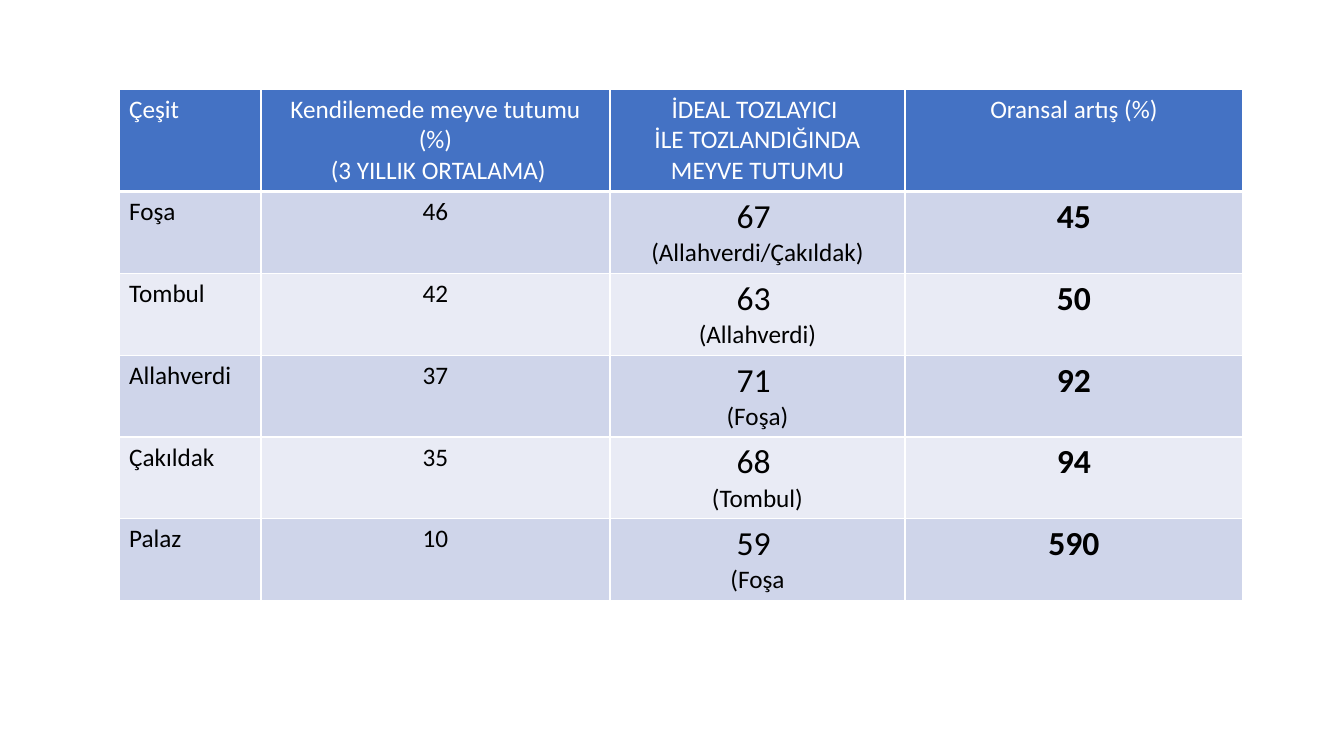
from dataclasses import dataclass

import lxml.etree
import pptx
import pptx.dml.color
import pptx.enum.text
import pptx.oxml.ns
import pptx.util

EMU_PER_PX = 914400 / 100.8


@dataclass(frozen=True)
class Theme:
    font: str = "Calibri"
    header_fill: str = "4472C4"
    band_fills: tuple[str, str] = ("CFD5EA", "E9EBF5")
    header_text: str = "FFFFFF"
    body_text: str = "000000"
    border: str = "FFFFFF"
    body_size: int = 18
    figure_size: int = 24
    thin: int = 1
    thick: int = 3


@dataclass(frozen=True)
class Variety:
    name: str
    selfed: int
    pollinated: int
    pollinator: str
    increase: int


@dataclass(frozen=True)
class Line:
    text: str
    size: int
    bold: bool = False


THEME = Theme()
LEFT, TOP = 119, 89
COLUMN_WIDTHS = (142, 349, 295, 338)
HEADER_HEIGHT, ROW_HEIGHT = 100, 80

HEADINGS = (
    ("Çeşit",),
    ("Kendilemede meyve tutumu (%)", " (3 YILLIK ORTALAMA)"),
    ("İDEAL TOZLAYICI ", "İLE TOZLANDIĞINDA", "MEYVE TUTUMU"),
    ("Oransal artış (%)",),
)
VARIETIES = (
    Variety("Foşa", 46, 67, "(Allahverdi/Çakıldak)", 45),
    Variety("Tombul", 42, 63, "(Allahverdi)", 50),
    Variety("Allahverdi", 37, 71, "(Foşa)", 92),
    Variety("Çakıldak", 35, 68, "(Tombul)", 94),
    Variety("Palaz", 10, 59, "(Foşa", 590),
)


def px(length: int) -> pptx.util.Emu:
    return pptx.util.Emu(round(length * EMU_PER_PX))


def rgb(value: str) -> pptx.dml.color.RGBColor:
    return pptx.dml.color.RGBColor.from_string(value)


def variety_lines(variety: Variety) -> list[list[Line]]:
    """Return the lines of each of the four cells in a variety's row."""
    body, figure = THEME.body_size, THEME.figure_size
    return [
        [Line(variety.name, body)],
        [Line(str(variety.selfed), body)],
        [Line(f"{variety.pollinated} ", figure), Line(variety.pollinator, body)],
        [Line(str(variety.increase), figure, bold=True)],
    ]


def set_borders(cell: pptx.table._Cell, bottom: int) -> None:
    """Draw thin borders, with the bottom one at its own width in points."""
    properties = cell._tc.get_or_add_tcPr()
    widths = {"lnL": THEME.thin, "lnR": THEME.thin, "lnT": THEME.thin, "lnB": bottom}
    for position, (side, width) in enumerate(widths.items()):
        edge = lxml.etree.Element(pptx.oxml.ns.qn(f"a:{side}"), w=str(pptx.util.Pt(width)))
        fill = lxml.etree.SubElement(edge, pptx.oxml.ns.qn("a:solidFill"))
        lxml.etree.SubElement(fill, pptx.oxml.ns.qn("a:srgbClr"), val=THEME.border)
        properties.insert(position, edge)


def fill_cell(cell: pptx.table._Cell, lines: list[Line], fill: str, color: str,
              centred: bool, bottom: int) -> None:
    cell.fill.solid()
    cell.fill.fore_color.rgb = rgb(fill)
    set_borders(cell, bottom)
    frame = cell.text_frame
    for index, line in enumerate(lines):
        paragraph = frame.add_paragraph() if index else frame.paragraphs[0]
        if centred:
            paragraph.alignment = pptx.enum.text.PP_ALIGN.CENTER
        run = paragraph.add_run()
        run.text = line.text
        run.font.name = THEME.font
        run.font.size = pptx.util.Pt(line.size)
        run.font.bold = line.bold
        run.font.color.rgb = rgb(color)


def add_fruit_set_table(slide: pptx.slide.Slide) -> None:
    headings = [[Line(text, THEME.body_size) for text in heading] for heading in HEADINGS]
    rows = [headings] + [variety_lines(variety) for variety in VARIETIES]
    heights = [HEADER_HEIGHT] + [ROW_HEIGHT] * len(VARIETIES)
    fruit_set = slide.shapes.add_table(
        len(rows), len(COLUMN_WIDTHS), px(LEFT), px(TOP),
        px(sum(COLUMN_WIDTHS)), px(sum(heights)),
    ).table
    for column, width in zip(fruit_set.columns, COLUMN_WIDTHS):
        column.width = px(width)
    for row_index, (row, height) in enumerate(zip(rows, heights)):
        fruit_set.rows[row_index].height = px(height)
        is_header = row_index == 0
        fill = THEME.header_fill if is_header else THEME.band_fills[(row_index - 1) % 2]
        color = THEME.header_text if is_header else THEME.body_text
        bottom = THEME.thick if is_header else THEME.thin
        for column_index, lines in enumerate(row):
            fill_cell(fruit_set.cell(row_index, column_index), lines, fill, color,
                      centred=column_index > 0, bottom=bottom)


def main() -> None:
    presentation = pptx.Presentation()
    presentation.slide_width = px(1344)
    presentation.slide_height = px(756)
    slide = presentation.slides.add_slide(presentation.slide_layouts[6])
    add_fruit_set_table(slide)
    presentation.save("out.pptx")


if __name__ == "__main__":
    main()
